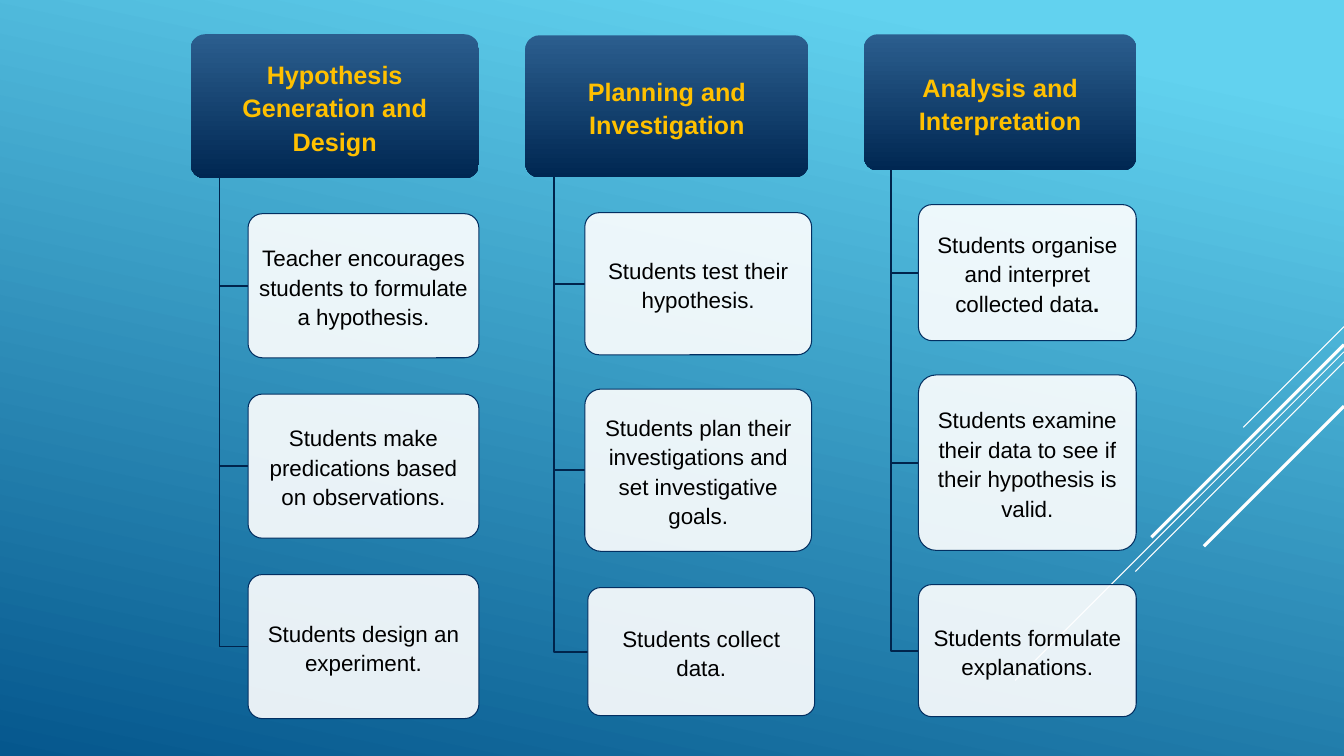
import pptx
import pptx.dml.color
import pptx.enum.shapes
import pptx.enum.text
import pptx.oxml
import pptx.oxml.ns
import pptx.util
from pptx.util import Inches

RGBColor = pptx.dml.color.RGBColor
SKY = RGBColor(0x62, 0xD2, 0xEF)
OCEAN = RGBColor(0x05, 0x57, 0x8D)
STEEL = RGBColor(0x2B, 0x5E, 0x8E)
NAVY = RGBColor(0x00, 0x27, 0x52)
BRANCH = RGBColor(0x00, 0x24, 0x4C)
OUTLINE = RGBColor(0x02, 0x2F, 0x61)
GOLD = RGBColor(0xFF, 0xC0, 0x00)
WHITE = RGBColor(0xFF, 0xFF, 0xFF)
BLACK = RGBColor(0x00, 0x00, 0x00)

# Each stripe: start, end, width in points
STRIPES = [
    ((13.33, 3.24), (12.33, 4.24), 0.75),
    ((13.33, 3.49), (10.07, 6.75), 0.75),
    ((13.33, 3.59), (11.26, 5.67), 0.75),
    ((13.33, 3.42), (11.42, 5.33), 2.25),
    ((13.33, 4.03), (11.94, 5.42), 2.25),
]

# Header and step boxes are left, top, width, height; runs are (text, bold)
STAGES = [
    ("Hypothesis Generation and Design", (1.89, 0.34, 2.86, 1.43), [
        ((2.46, 2.12, 2.29, 1.43),
         [("Teacher encourages students to formulate a hypothesis.", False)]),
        ((2.46, 3.91, 2.29, 1.43),
         [("Students make predications based on observations.", False)]),
        ((2.46, 5.7, 2.29, 1.43),
         [("Students design an experiment.", False)]),
    ]),
    ("Planning and Investigation", (5.21, 0.35, 2.81, 1.41), [
        ((5.8, 2.11, 2.25, 1.41),
         [("Students test their hypothesis.", False)]),
        ((5.8, 3.86, 2.25, 1.61),
         [("Students plan their investigations and set investigative goals.", False)]),
        ((5.83, 5.83, 2.25, 1.27),
         [("Students collect data.", False)]),
    ]),
    ("Analysis and Interpretation", (8.57, 0.34, 2.7, 1.35), [
        ((9.11, 2.03, 2.16, 1.35),
         [("Students organise and interpret collected data", False), (".", True)]),
        ((9.11, 3.72, 2.16, 1.74),
         [("Students examine their data to see if their hypothesis is valid.", False)]),
        ((9.11, 5.8, 2.16, 1.31),
         [("Students formulate explanations.", False)]),
    ]),
]


def set_gradient(fill, stops, angle):
    """Fill with two (position, colour) stops; angle runs clockwise."""
    fill.gradient()
    fill.gradient_angle = 360 - angle
    for stop, (position, colour) in zip(fill.gradient_stops, stops):
        stop.position = position
        stop.color.rgb = colour


def add_stripe(page, start, end, width):
    stripe = page.shapes.add_connector(
        pptx.enum.shapes.MSO_CONNECTOR.STRAIGHT,
        *[Inches(value) for value in start + end])
    stripe.line.color.rgb = WHITE
    stripe.line.width = pptx.util.Pt(width)
    pptx.oxml.ns.qn("a:effectLst")
    stripe._element.spPr.append(
        stripe._element.spPr.makeelement(pptx.oxml.ns.qn("a:effectLst"), {}))


def add_card(page, box, runs, size, colour, side_inset):
    card = page.shapes.add_shape(
        pptx.enum.shapes.MSO_SHAPE.ROUNDED_RECTANGLE,
        *[Inches(value) for value in box])
    card.adjustments[0] = 0.1
    card.shadow.inherit = False
    frame = card.text_frame
    frame.word_wrap = True
    frame.vertical_anchor = pptx.enum.text.MSO_ANCHOR.MIDDLE
    frame.margin_left = frame.margin_right = Inches(side_inset)
    frame.margin_top = frame.margin_bottom = Inches(0.02)
    para = frame.paragraphs[0]
    para.alignment = pptx.enum.text.PP_ALIGN.CENTER
    para.line_spacing = 1.1
    for text, bold in runs:
        span = para.add_run()
        span.text = text
        span.font.name = "Arial"
        span.font.size = pptx.util.Pt(size)
        span.font.bold = bold
        span.font.color.rgb = colour
    return card


def add_header(page, box, title):
    header = add_card(page, box, [(title, True)], 18, GOLD, 0.04)
    set_gradient(header.fill, [(0, STEEL), (1, NAVY)], 90)
    header.line.fill.background()


def add_step(page, box, runs):
    step = add_card(page, box, runs, 16, BLACK, 0.03)
    step.fill.solid()
    step.fill.fore_color.rgb = WHITE
    white = step._element.spPr.find(".//" + pptx.oxml.ns.qn("a:srgbClr"))
    white.append(white.makeelement(pptx.oxml.ns.qn("a:alpha"), {"val": "90000"}))
    step.line.color.rgb = OUTLINE
    step.line.width = pptx.util.Pt(0.75)


def add_branch(page, header_box, step_box):
    """Draw the elbow from under the header to the step's left side."""
    left, top, width, height = header_box
    trunk = Inches(left + width / 10)
    middle = Inches(step_box[1] + step_box[3] / 2)
    builder = page.shapes.build_freeform(trunk, Inches(top + height))
    builder.add_line_segments(
        [(trunk, middle), (Inches(step_box[0]), middle)], close=False)
    branch = builder.convert_to_shape()
    branch.shadow.inherit = False
    branch.fill.background()
    branch.line.color.rgb = BRANCH
    branch.line.width = pptx.util.Pt(1.25)


def main():
    deck = pptx.Presentation()
    deck.slide_width, deck.slide_height = Inches(13.33), Inches(7.5)
    page = deck.slides.add_slide(deck.slide_layouts[6])
    set_gradient(page.background.fill, [(0.1, SKY), (1, OCEAN)], 102)
    for start, end, width in STRIPES:
        add_stripe(page, start, end, width)
    for title, header_box, steps in STAGES:
        add_header(page, header_box, title)
        for step_box, runs in steps:
            add_branch(page, header_box, step_box)
            add_step(page, step_box, runs)
    deck.save("out.pptx")


if __name__ == "__main__":
    main()
